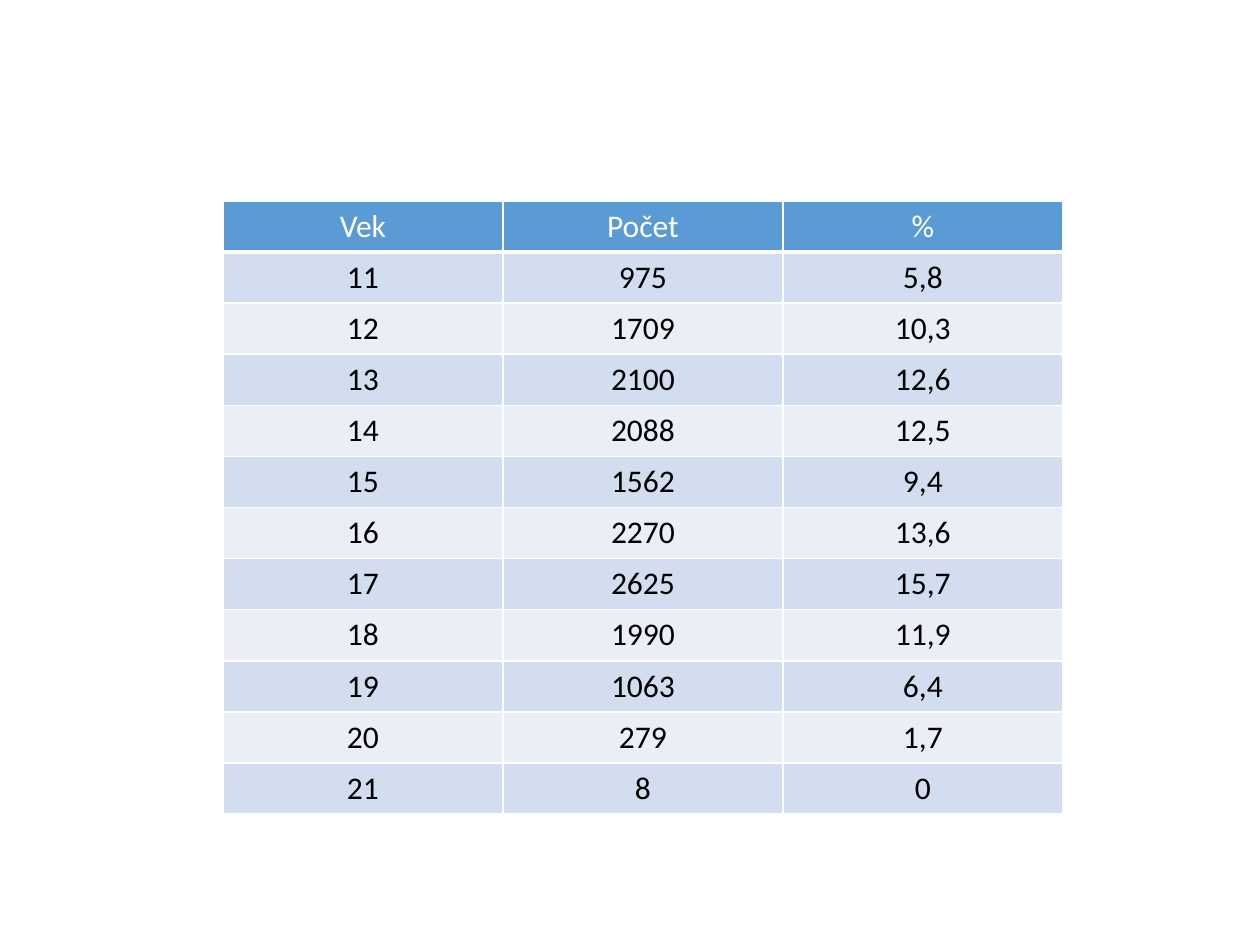
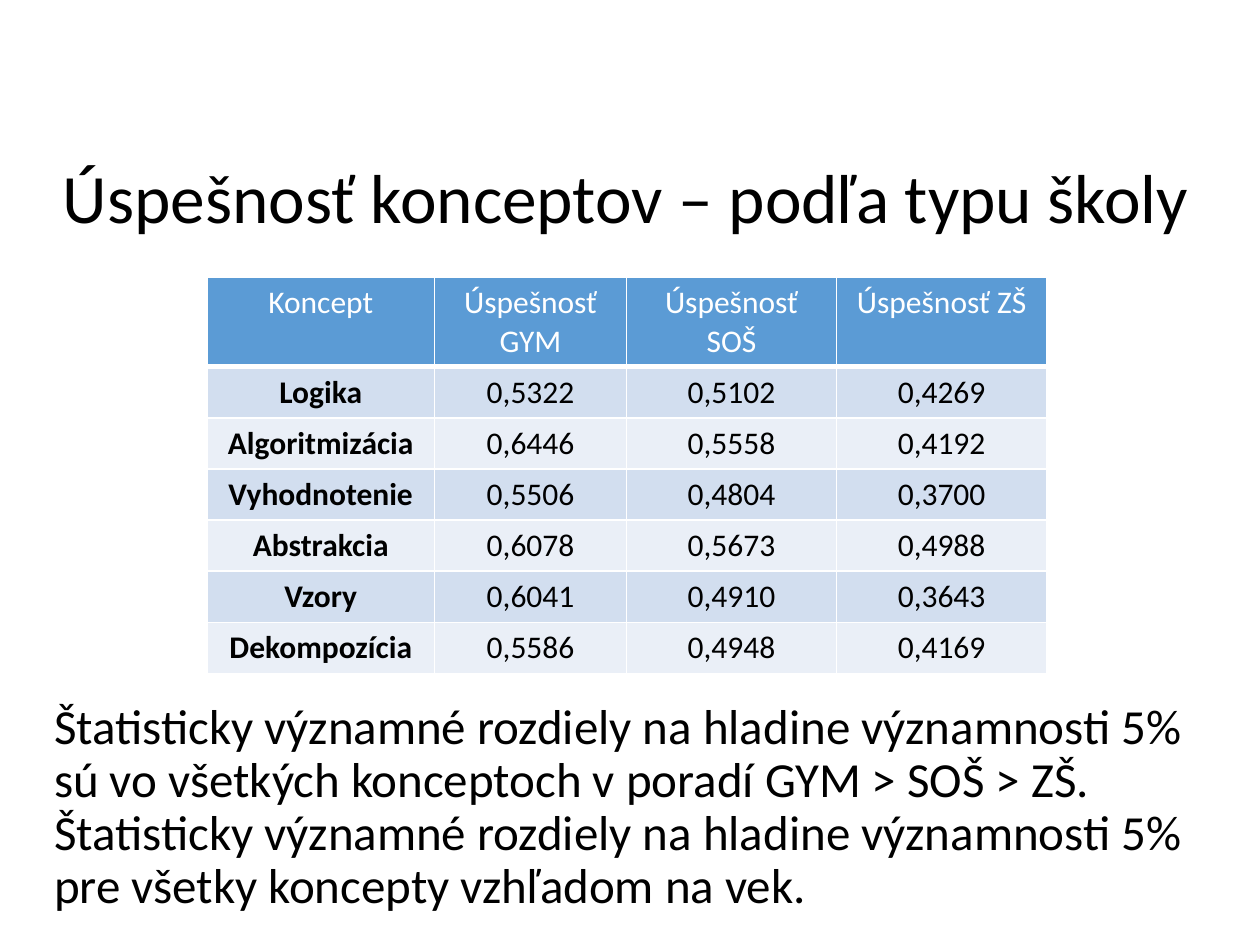
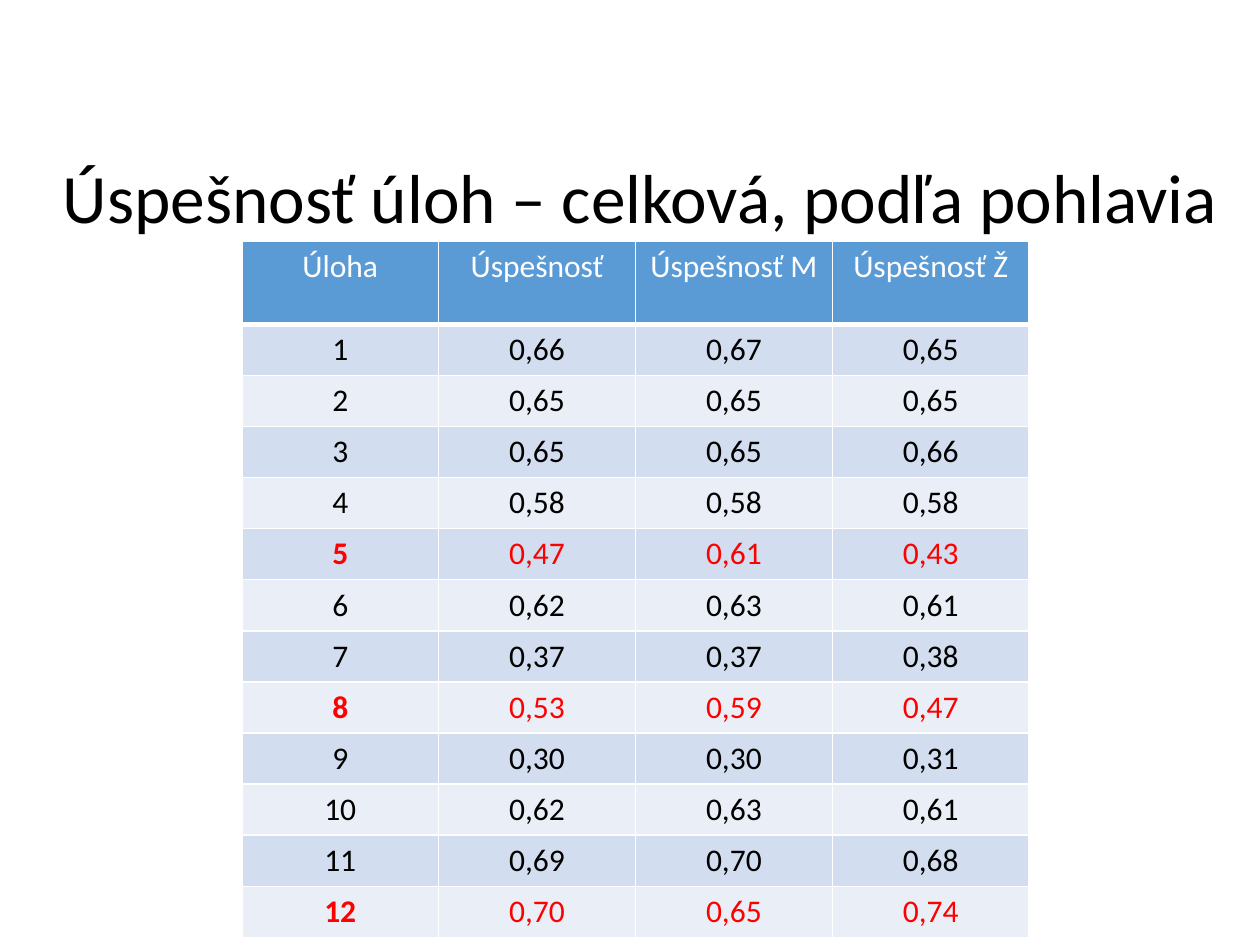
"""Build three slides with tables on pupils' age and success rates."""
import pptx
import pptx.dml.color
import pptx.enum.text
import pptx.oxml
import pptx.oxml.ns
import pptx.util

Pt = pptx.util.Pt
ALIGN = pptx.enum.text.PP_ALIGN

COLORS = {
    "header": "5B9BD5", "odd": "D2DEEF", "even": "EAEFF7",
    "white": "FFFFFF", "text": "000000", "accent": "FF0000",
}
FONT = "Calibri"
ROW_HEIGHT = 29.2

SLIDES = [
    {
        "table": {
            "at": (127.4, 114.8), "cols": [160] * 3, "header_height": ROW_HEIGHT,
            "rows": [
                ("Vek", "Počet", "%"),
                ("11", "975", "5,8"),
                ("12", "1709", "10,3"),
                ("13", "2100", "12,6"),
                ("14", "2088", "12,5"),
                ("15", "1562", "9,4"),
                ("16", "2270", "13,6"),
                ("17", "2625", "15,7"),
                ("18", "1990", "11,9"),
                ("19", "1063", "6,4"),
                ("20", "279", "1,7"),
                ("21", "8", "0"),
            ],
        },
    },
    {
        "title": ("Úspešnosť konceptov – podľa typu školy", 679),
        "table": {
            "at": (118.2, 158.6), "cols": [130.2, 109.6, 120.1, 120.1],
            "header_height": 51, "bold_labels": True,
            "rows": [
                ("Koncept", "Úspešnosť GYM", "Úspešnosť SOŠ", "Úspešnosť ZŠ"),
                ("Logika", "0,5322", "0,5102", "0,4269"),
                ("Algoritmizácia", "0,6446", "0,5558", "0,4192"),
                ("Vyhodnotenie", "0,5506", "0,4804", "0,3700"),
                ("Abstrakcia", "0,6078", "0,5673", "0,4988"),
                ("Vzory", "0,6041", "0,4910", "0,3643"),
                ("Dekompozícia", "0,5586", "0,4948", "0,4169"),
            ],
        },
        "body": "Štatisticky významné rozdiely na hladine významnosti 5% sú vo "
                "všetkých konceptoch v poradí GYM > SOŠ > ZŠ.\v"
                "Štatisticky významné rozdiely na hladine významnosti 5% pre "
                "všetky koncepty vzhľadom na vek.",
    },
    {
        "title": ("Úspešnosť úloh – celková, podľa pohlavia", 698),
        "table": {
            "at": (138.2, 137.8), "cols": [112.5] * 4, "header_height": 47.5,
            "accent_rows": (5, 8, 12),
            "rows": [
                ("Úloha", "Úspešnosť", "Úspešnosť M", "Úspešnosť Ž"),
                ("1", "0,66", "0,67", "0,65"),
                ("2", "0,65", "0,65", "0,65"),
                ("3", "0,65", "0,65", "0,66"),
                ("4", "0,58", "0,58", "0,58"),
                ("5", "0,47", "0,61", "0,43"),
                ("6", "0,62", "0,63", "0,61"),
                ("7", "0,37", "0,37", "0,38"),
                ("8", "0,53", "0,59", "0,47"),
                ("9", "0,30", "0,30", "0,31"),
                ("10", "0,62", "0,63", "0,61"),
                ("11", "0,69", "0,70", "0,68"),
                ("12", "0,70", "0,65", "0,74"),
            ],
        },
    },
]


def rgb(name):
    return pptx.dml.color.RGBColor.from_string(COLORS[name])


def write_text(tf, text, size=18, color="text", bold=False, align=ALIGN.LEFT, spacing=None):
    p = tf.paragraphs[0]
    p.text = text
    p.alignment = align
    if spacing:
        p.line_spacing = spacing
    for r in p.runs:
        r.font.name = FONT
        r.font.size = Pt(size)
        r.font.bold = bold
        r.font.color.rgb = rgb(color)


def add_text_box(slide, text, left, top, width, height, size):
    tf = slide.shapes.add_textbox(Pt(left), Pt(top), Pt(width), Pt(height)).text_frame
    tf.word_wrap = True
    write_text(tf, text, size=size, spacing=0.9)


def style_cell(cell, fill, bottom):
    tc_pr = cell._tc.get_or_add_tcPr()
    for side, width in (("lnL", 1), ("lnR", 1), ("lnT", 1), ("lnB", bottom)):
        tc_pr.append(pptx.oxml.parse_xml(
            f'<a:{side} {pptx.oxml.ns.nsdecls("a")} w="{Pt(width)}"><a:solidFill>'
            f'<a:srgbClr val="{COLORS["white"]}"/></a:solidFill></a:{side}>'))
    cell.fill.solid()
    cell.fill.fore_color.rgb = rgb(fill)


def add_data_table(slide, at, cols, rows, header_height, bold_labels=False, accent_rows=()):
    heights = [header_height] + [ROW_HEIGHT] * (len(rows) - 1)
    left, top = at
    table = slide.shapes.add_table(len(rows), len(cols), Pt(left), Pt(top),
                                   Pt(sum(cols)), Pt(sum(heights))).table
    for column, width in zip(table.columns, cols):
        column.width = Pt(width)
    for i, (values, height) in enumerate(zip(rows, heights)):
        table.rows[i].height = Pt(height)
        header, accent = i == 0, i in accent_rows
        fill = "header" if header else "odd" if i % 2 else "even"
        color = "white" if header else "accent" if accent else "text"
        for j, value in enumerate(values):
            cell = table.cell(i, j)
            style_cell(cell, fill, bottom=3 if header else 1)
            bold = j == 0 and not header and (bold_labels or accent)
            write_text(cell.text_frame, value, color=color, bold=bold, align=ALIGN.CENTER)


def main():
    prs = pptx.Presentation()
    prs.slide_width, prs.slide_height = Pt(720), Pt(540)
    for content in SLIDES:
        slide = prs.slides.add_slide(prs.slide_layouts[6])
        if "title" in content:
            title, width = content["title"]
            add_text_box(slide, title, 28.8, 90, width, 59, size=39.6)
        add_data_table(slide, **content["table"])
        if "body" in content:
            add_text_box(slide, content["body"], 23.8, 397.6, 684, 130, size=28)
    prs.save("out.pptx")


if __name__ == "__main__":
    main()
